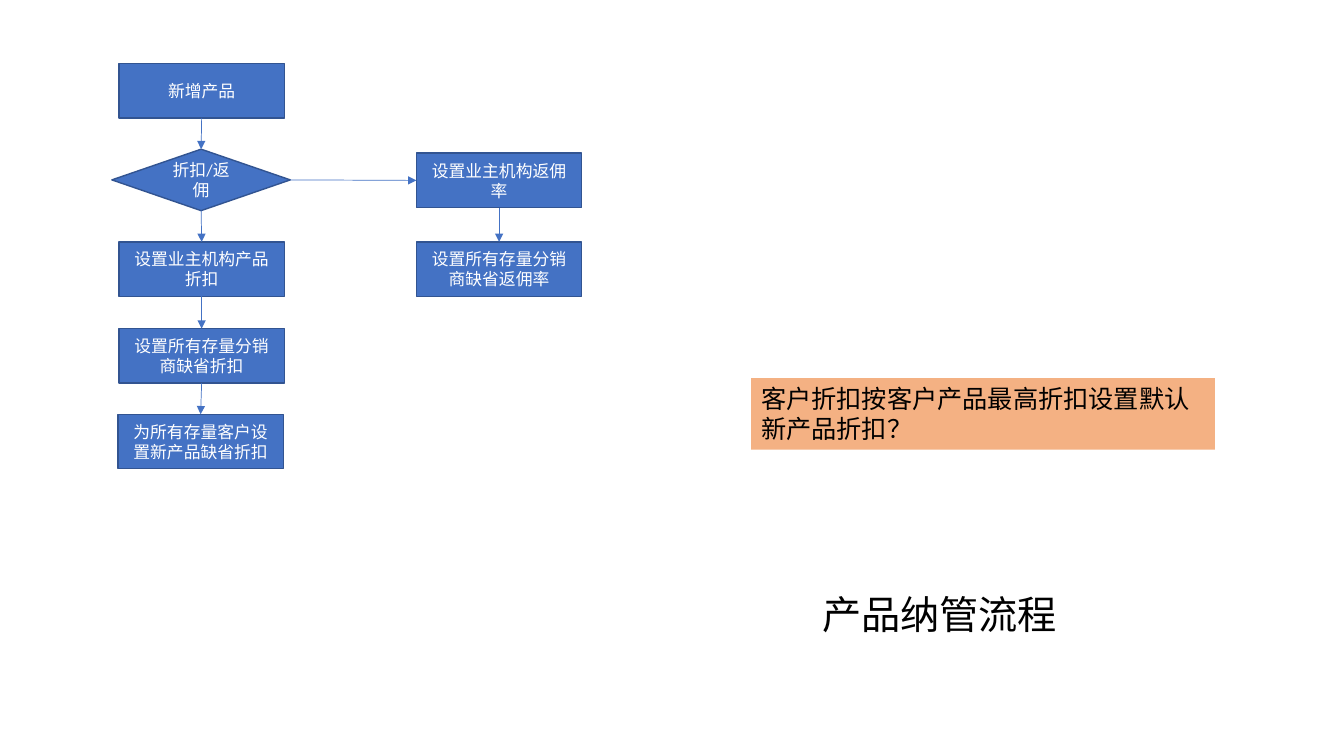
from lxml import etree
from pptx import Presentation
from pptx.dml.color import RGBColor
from pptx.enum.shapes import MSO_CONNECTOR, MSO_SHAPE
from pptx.enum.text import MSO_ANCHOR, PP_ALIGN
from pptx.oxml.ns import qn
from pptx.util import Inches, Pt

RECT, DIAMOND = MSO_SHAPE.RECTANGLE, MSO_SHAPE.DIAMOND
STRAIGHT = MSO_CONNECTOR.STRAIGHT
TOP, MIDDLE = MSO_ANCHOR.TOP, MSO_ANCHOR.MIDDLE
LEFT, CENTER = PP_ALIGN.LEFT, PP_ALIGN.CENTER
UP, WEST, DOWN, EAST = range(4)

COLORS = {
    "blue": "4472C4",
    "edge": "325491",
    "note": "F4B183",
    "white": "FFFFFF",
    "black": "000000",
}


def color(name):
    return RGBColor.from_string(COLORS[name])


def write(shape, text, size, ink, align, anchor):
    frame = shape.text_frame
    frame.word_wrap = True
    frame.vertical_anchor = anchor
    para = frame.paragraphs[0]
    para.text = text
    para.alignment = align
    para.font.name = "Calibri"
    para.font.size = Pt(size)
    para.font.color.rgb = color(ink)


prs = Presentation()
prs.slide_width = Inches(13.33)
prs.slide_height = Inches(7.5)
shapes = prs.slides.add_slide(prs.slide_layouts[6]).shapes

title = shapes.add_textbox(Inches(7.07), Inches(5.81), Inches(4.5), Inches(0.57))
write(title, "产品纳管流程", 28, "black", CENTER, TOP)

STEPS = {
    "new": (RECT, 1.18, 0.63, "新增产品"),
    "choice": (DIAMOND, 1.11, 1.48, "折扣/返佣"),
    "owner": (RECT, 1.18, 2.4, "设置业主机构产品折扣"),
    "dealer": (RECT, 1.18, 3.26, "设置所有存量分销商缺省折扣"),
    "client": (RECT, 1.17, 4.11, "为所有存量客户设置新产品缺省折扣"),
    "rate": (RECT, 4.13, 1.52, "设置业主机构返佣率"),
    "rebate": (RECT, 4.13, 2.4, "设置所有存量分销商缺省返佣率"),
}
SIZES = {RECT: (1.64, 0.54), DIAMOND: (1.77, 0.61)}

nodes = {}
for key, (kind, left, top, text) in STEPS.items():
    wide, high = SIZES[kind]
    node = shapes.add_shape(kind, Inches(left), Inches(top), Inches(wide), Inches(high))
    node.shadow.inherit = False
    node.fill.solid()
    node.fill.fore_color.rgb = color("blue")
    node.line.color.rgb = color("edge")
    node.line.width = Pt(1)
    write(node, text, 12, "white", CENTER, MIDDLE)
    nodes[key] = node

LINKS = [
    ("new", DOWN, "choice", UP),
    ("choice", DOWN, "owner", UP),
    ("owner", DOWN, "dealer", UP),
    ("dealer", DOWN, "client", UP),
    ("choice", EAST, "rate", WEST),
    ("rate", DOWN, "rebate", UP),
]
for start, out, end, into in LINKS:
    link = shapes.add_connector(STRAIGHT, 0, 0, 0, 0)
    link.begin_connect(nodes[start], out)
    link.end_connect(nodes[end], into)
    link.line.color.rgb = color("blue")
    link.line.width = Pt(0.5)
    props = link.line._get_or_add_ln()
    etree.SubElement(props, qn("a:tailEnd"), type="triangle")
    etree.SubElement(link._element.spPr, qn("a:effectLst"))

note = shapes.add_shape(RECT, Inches(7.45), Inches(3.75), Inches(4.6), Inches(0.71))
note.shadow.inherit = False
note.fill.solid()
note.fill.fore_color.rgb = color("note")
note.line.fill.background()
write(note, "客户折扣按客户产品最高折扣设置默认新产品折扣？", 18, "black", LEFT, TOP)

prs.save("out.pptx")
